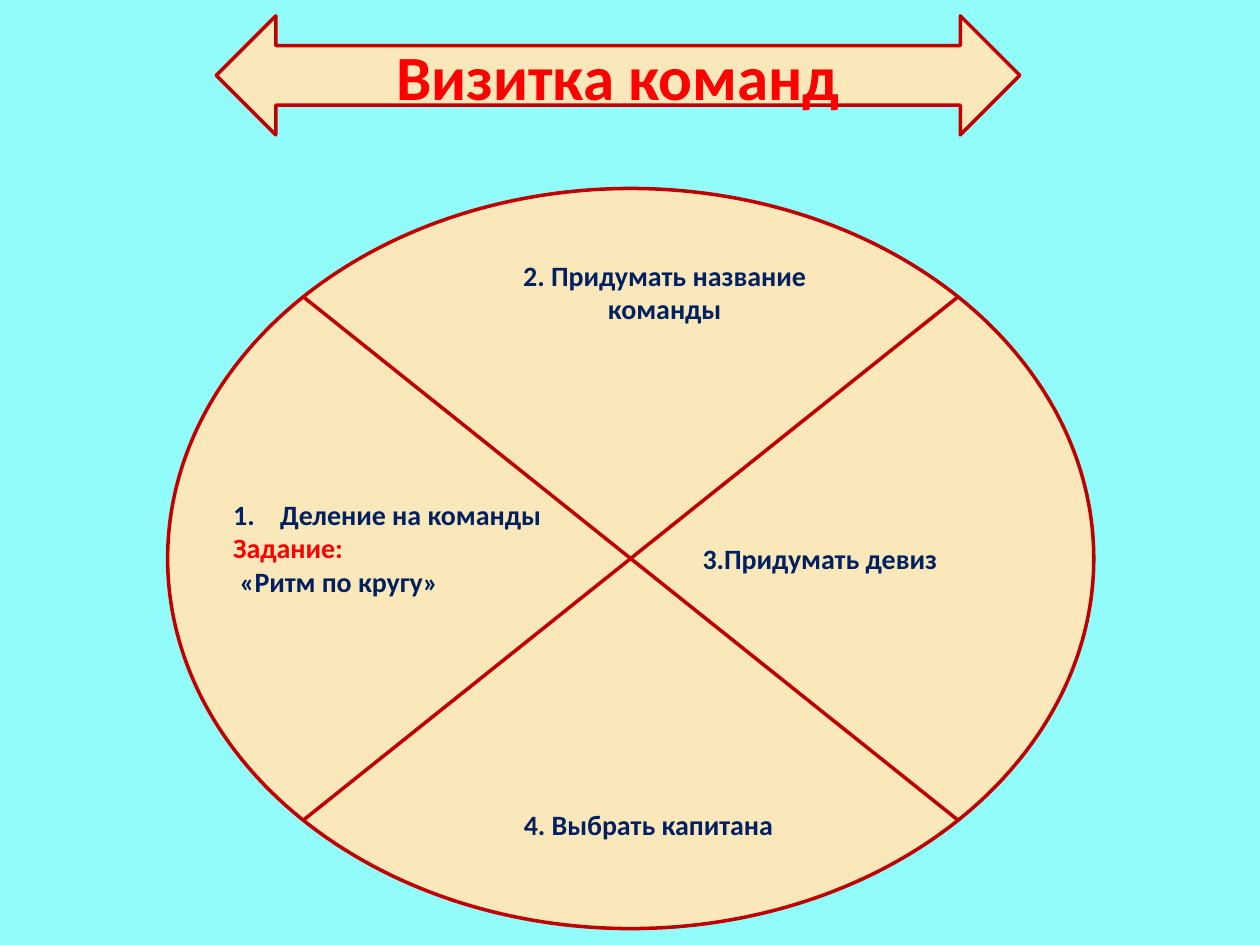
from dataclasses import dataclass

from lxml import etree
from pptx import Presentation
from pptx.dml.color import RGBColor
from pptx.enum.shapes import MSO_SHAPE
from pptx.enum.text import MSO_ANCHOR, MSO_AUTO_SIZE, PP_ALIGN
from pptx.oxml.ns import qn
from pptx.shapes.autoshape import Shape
from pptx.slide import Slide
from pptx.text.text import TextFrame
from pptx.util import Cm, Pt

CYAN = RGBColor(0x91, 0xFC, 0xFA)
CREAM = RGBColor(0xFB, 0xE8, 0xBA)
DARK_RED = RGBColor(0xC0, 0x00, 0x00)
RED = RGBColor(0xFF, 0x00, 0x00)
NAVY = RGBColor(0x00, 0x20, 0x60)

FONT = "Calibri"
LEFT, CENTER = PP_ALIGN.LEFT, PP_ALIGN.CENTER
MIDDLE = MSO_ANCHOR.MIDDLE
TITLE_ONLY = 5


@dataclass(frozen=True)
class Area:
    left: float
    top: float
    width: float
    height: float

    def lengths(self) -> tuple[Cm, Cm, Cm, Cm]:
        return Cm(self.left), Cm(self.top), Cm(self.width), Cm(self.height)


@dataclass(frozen=True)
class Line:
    text: str
    color: RGBColor = NAVY
    size: int = 16
    align: PP_ALIGN = LEFT
    numbered: bool = False
    indent: float = 0


@dataclass(frozen=True)
class Step:
    area: Area
    lines: tuple[Line, ...]


BANNER = Area(4.36, 0.32, 16.2, 2.4)
WHEEL = Area(3.38, 3.8, 18.67, 14.92)
WHEEL_TEXT_INSET = 8.05

TITLE = Line("Визитка команд", RED, 36, CENTER)
MOTTO = Line("3.Придумать девиз")
STEPS = (
    Step(Area(4.45, 9.9, 6.86, 2.31), (
        Line("Деление на команды", numbered=True),
        Line("Задание:", RED),
        Line("«Ритм по кругу»", indent=0.13),
    )),
    Step(Area(9.3, 5.08, 8.2, 1.63),
         (Line("2. Придумать название команды", align=CENTER),)),
    Step(Area(10.31, 16.15, 5.89, 0.94), (Line("4. Выбрать капитана"),)),
)


def write_lines(frame: TextFrame, lines: tuple[Line, ...]) -> None:
    frame.word_wrap = True
    for index, line in enumerate(lines):
        para = frame.add_paragraph() if index else frame.paragraphs[0]
        para.alignment = line.align
        properties = para._p.get_or_add_pPr()
        if line.numbered:
            properties.set("marL", str(Cm(0.95)))
            properties.set("indent", str(Cm(-0.95)))
            etree.SubElement(properties, qn("a:buAutoNum"), type="arabicPeriod")
        elif line.indent:
            properties.set("marL", str(Cm(line.indent)))
        span = para.add_run()
        span.text = line.text
        span.font.name = FONT
        span.font.size = Pt(line.size)
        span.font.bold = True
        span.font.color.rgb = line.color


def add_outlined_shape(page: Slide, kind: MSO_SHAPE, area: Area) -> Shape:
    shape = page.shapes.add_shape(kind, *area.lengths())
    shape.shadow.inherit = False
    shape.fill.solid()
    shape.fill.fore_color.rgb = CREAM
    shape.line.color.rgb = DARK_RED
    shape.line.width = Pt(2)
    return shape


def add_banner(page: Slide) -> None:
    arrow = add_outlined_shape(page, MSO_SHAPE.LEFT_RIGHT_ARROW, BANNER)
    title = page.shapes.title
    title.left, title.top, title.width, title.height = BANNER.lengths()
    title.text_frame.auto_size = MSO_AUTO_SIZE.NONE
    title.text_frame.vertical_anchor = MIDDLE
    write_lines(title.text_frame, (TITLE,))
    arrow._element.addnext(title._element)  # the title lies in front of the arrow


def add_wheel(page: Slide) -> None:
    wheel = add_outlined_shape(page, MSO_SHAPE.FLOWCHART_SUMMING_JUNCTION, WHEEL)
    frame = wheel.text_frame
    frame.margin_left, frame.margin_right = Cm(WHEEL_TEXT_INSET), 0
    frame.vertical_anchor = MIDDLE
    write_lines(frame, (MOTTO,))


def add_step(page: Slide, step: Step) -> None:
    box = page.shapes.add_textbox(*step.area.lengths())
    write_lines(box.text_frame, step.lines)


def main() -> None:
    deck = Presentation()
    deck.slide_width, deck.slide_height = Cm(25.4), Cm(19.05)
    page = deck.slides.add_slide(deck.slide_layouts[TITLE_ONLY])
    page.background.fill.solid()
    page.background.fill.fore_color.rgb = CYAN
    add_banner(page)
    add_wheel(page)
    for step in STEPS:
        add_step(page, step)
    deck.save("out.pptx")


if __name__ == "__main__":
    main()
